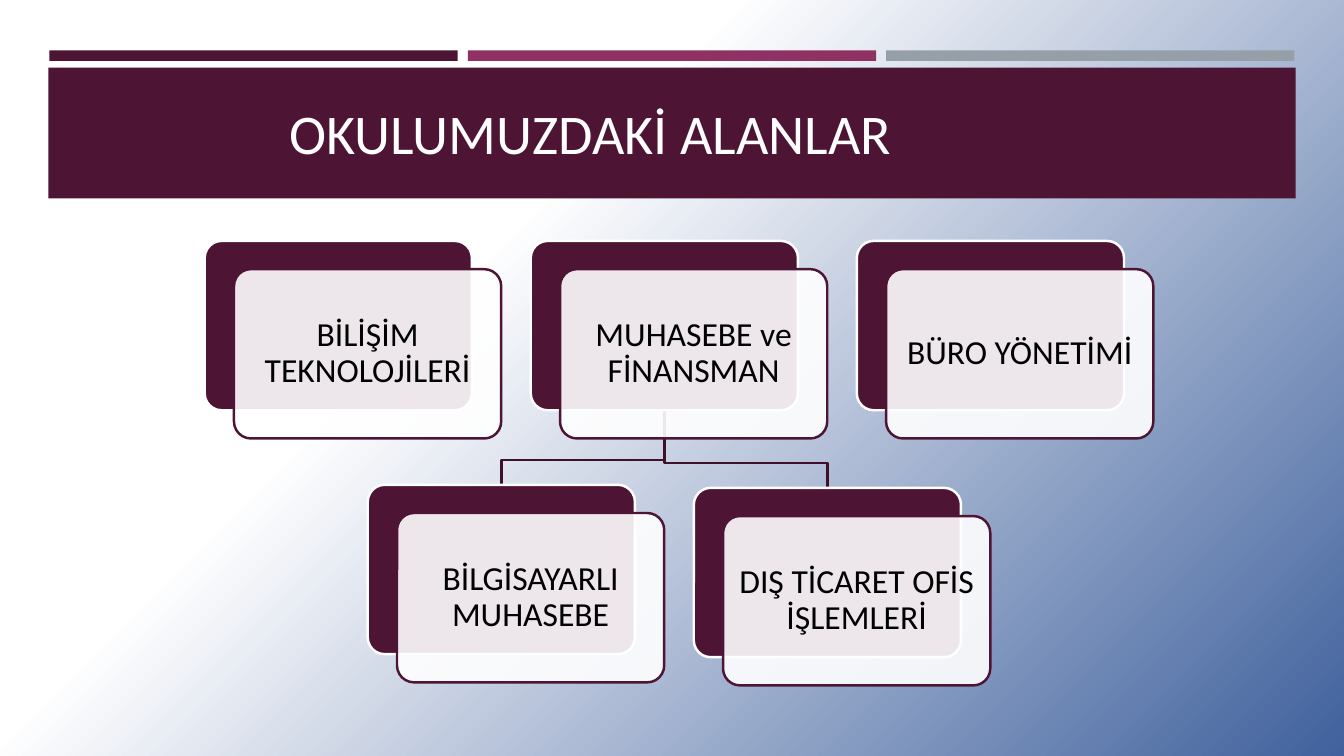
from copy import deepcopy
from dataclasses import dataclass

from lxml import etree
from pptx import Presentation
from pptx import util as u
from pptx.dml.color import RGBColor
from pptx.enum import shapes, text
from pptx.oxml.ns import qn


@dataclass(frozen=True)
class Theme:
    plum: str = "4D1434"
    rose: str = "903163"
    grey: str = "969FA7"
    dark: str = "3E102A"
    blue: str = "40619D"
    white: str = "FFFFFF"
    black: str = "000000"
    font: str = "Calibri"
    head: int = 40
    body: int = 24
    line: float = 1.75


T = Theme()
W, H = u.Inches(13.33), u.Inches(7.5)
LEFT, STEP = 15.23, 12.13
WIDE, HIGH = 19.88, 22.4
TOP, LOW, BASE = 31.87, 64.13, 64.53
CARDS = [
    (0, TOP, "BİLİŞİM TEKNOLOJİLERİ"),
    (2, TOP, "MUHASEBE ve FİNANSMAN"),
    (1, LOW, "BİLGİSAYARLI MUHASEBE"),
    (3, BASE, "DIŞ TİCARET OFİS İŞLEMLERİ"),
    (4, TOP, "BÜRO YÖNETİMİ"),
]


def rgb(code):
    return RGBColor.from_string(code)


def px(share):
    return round(W * share / 100)


def py(share):
    return round(H * share / 100)


def area(x, y, w, h):
    return px(x), py(y), px(w), py(h)


def paint(slide):
    fill = slide.background.fill
    fill.gradient()
    fill.gradient_angle = 315
    first, last = fill.gradient_stops
    first.color.rgb, last.color.rgb = rgb(T.white), rgb(T.blue)
    stops = slide.element.find(".//" + qn("a:gsLst"))
    mid = deepcopy(stops[0])
    mid.set("pos", "35000")
    stops.insert(1, mid)


def block(slide, kind, place, fill, line=None):
    shape = slide.shapes.add_shape(kind, *area(*place))
    shape.shadow.inherit = False
    shape.fill.solid()
    shape.fill.fore_color.rgb = rgb(fill)
    if line:
        shape.line.color.rgb = rgb(line)
        shape.line.width = u.Pt(T.line)
    else:
        shape.line.fill.background()
    return shape


def write(shape, words, size, color, align, anchor):
    frame = shape.text_frame
    frame.word_wrap = True
    frame.vertical_anchor = anchor
    para = frame.paragraphs[0]
    para.text = words
    para.alignment = align
    para.font.name = T.font
    para.font.size = u.Pt(size)
    para.font.color.rgb = rgb(color)
    return frame


def card(slide, col, y, words):
    kind = shapes.MSO_SHAPE.ROUNDED_RECTANGLE
    x = LEFT + STEP * col
    back = block(slide, kind, (x, y, WIDE, HIGH), T.plum, T.white)
    front = block(slide, kind, (x + 2.18, y + 3.73, WIDE, HIGH), T.white, T.plum)
    for shape in (back, front):
        shape.adjustments[0] = 0.1
    tint = front.element.spPr.find(qn("a:solidFill"))[0]
    etree.SubElement(tint, qn("a:alpha")).set("val", "90000")
    frame = write(front, words, T.body, T.black,
                  text.PP_ALIGN.CENTER, text.MSO_ANCHOR.MIDDLE)
    frame.margin_left = frame.margin_right = u.Inches(0.1)
    frame.margin_top = frame.margin_bottom = u.Inches(0.1)
    frame.paragraphs[0].line_spacing = 0.9


def branch(slide, start, end, y):
    x1, x2 = (px(LEFT + STEP * col + WIDE / 2) for col in (start, end))
    bend = py(y - 3.3)
    path = slide.shapes.build_freeform(x1, py(TOP + HIGH))
    path.add_line_segments([(x1, bend), (x2, bend), (x2, py(y))], close=False)
    shape = path.convert_to_shape()
    shape.shadow.inherit = False
    shape.fill.background()
    shape.line.color.rgb = rgb(T.dark)
    shape.line.width = u.Pt(T.line)


def header(slide):
    kind = shapes.MSO_SHAPE.RECTANGLE
    for i, color in enumerate((T.plum, T.rose, T.grey)):
        block(slide, kind, (3.68 + 31.13 * i, 6.67, 30.38, 1.4), color)
    block(slide, kind, (3.6, 8.93, 92.8, 17.33), T.plum)
    title = slide.shapes.add_textbox(*area(20.78, 6.67, 64.52, 15.87))
    write(title, "OKULUMUZDAKİ ALANLAR", T.head, T.white,
          text.PP_ALIGN.JUSTIFY, text.MSO_ANCHOR.BOTTOM)


def main():
    deck = Presentation()
    deck.slide_width, deck.slide_height = W, H
    slide = deck.slides.add_slide(deck.slide_layouts[6])
    paint(slide)
    header(slide)
    branch(slide, 2, 3, BASE)
    branch(slide, 2, 1, LOW)
    for col, y, words in CARDS:
        card(slide, col, y, words)
    deck.save("out.pptx")


if __name__ == "__main__":
    main()
